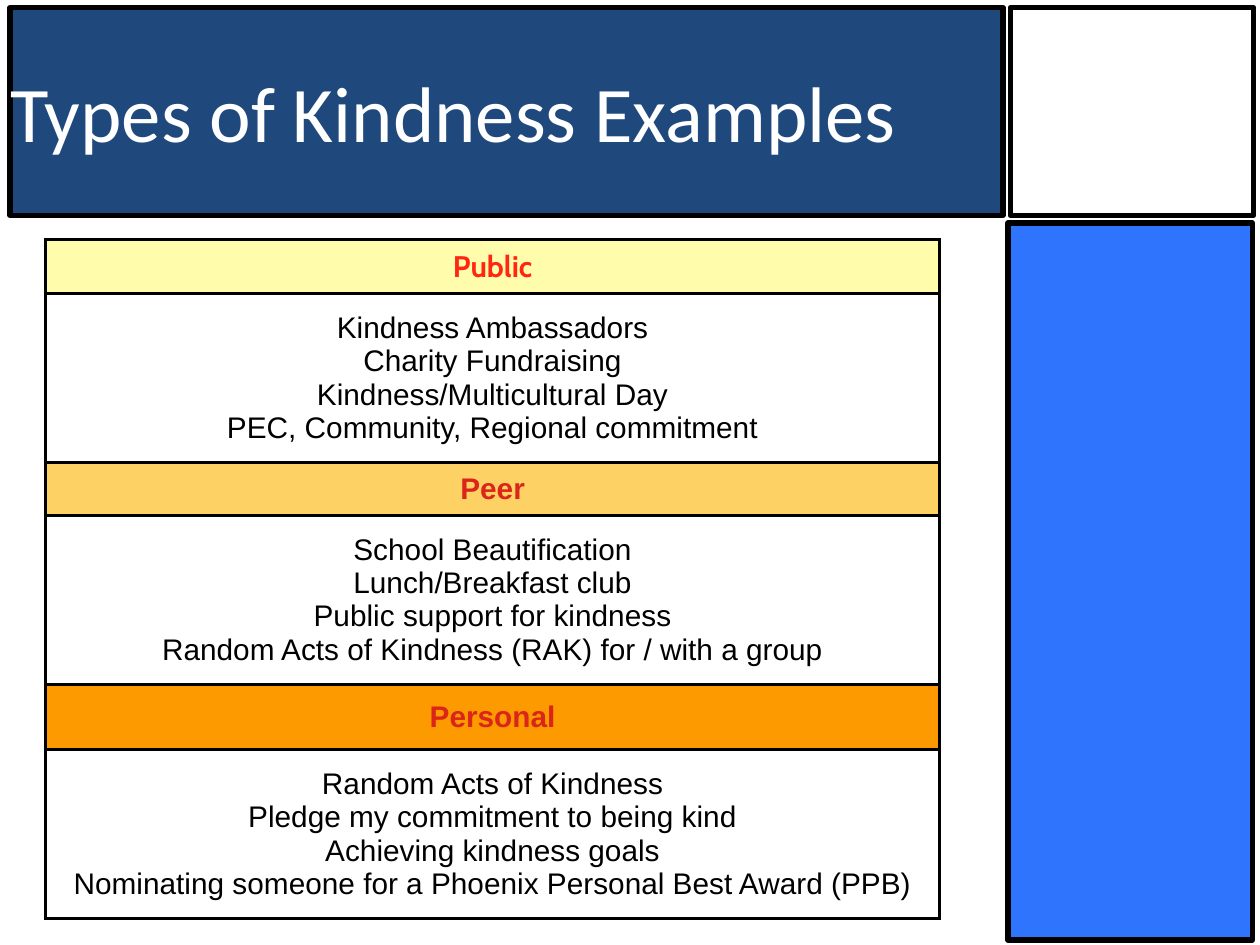
from dataclasses import dataclass

from lxml import etree
from pptx import Presentation
from pptx import util as u
from pptx.dml.color import RGBColor
from pptx.enum import shapes, text
from pptx.oxml import ns

EMU_PER_PX = 9144
BLACK = RGBColor(0x00, 0x00, 0x00)
WHITE = RGBColor(0xFF, 0xFF, 0xFF)
NAVY = RGBColor(0x1F, 0x49, 0x7D)
BLUE = RGBColor(0x2F, 0x74, 0xFD)
YELLOW = RGBColor(0xFF, 0xFC, 0xAB)
AMBER = RGBColor(0xFE, 0xD1, 0x64)
ORANGE = RGBColor(0xFD, 0x9A, 0x00)
BRIGHT_RED = RGBColor(0xFF, 0x27, 0x12)
RED = RGBColor(0xDB, 0x25, 0x1A)


@dataclass
class Box:
    x: int
    y: int
    w: int
    h: int
    fill: RGBColor


@dataclass
class Category:
    name: str
    height: int
    fill: RGBColor
    color: RGBColor
    font: str
    examples: list[str]


TITLE = Box(8, 6, 788, 165, NAVY)
PANELS = [Box(802, 6, 193, 165, WHITE), Box(800, 177, 194, 569, BLUE)]
TABLE_X, TABLE_Y, TABLE_W = 36, 190, 710
EXAMPLES_H = 134
CELL_MARGIN = 4
CATEGORIES = [
    Category("Public", 43, YELLOW, BRIGHT_RED, "Cabin", [
        "Kindness Ambassadors",
        "Charity Fundraising",
        "Kindness/Multicultural Day",
        "PEC, Community, Regional commitment",
    ]),
    Category("Peer", 42, AMBER, RED, "Arial", [
        "School Beautification",
        "Lunch/Breakfast club",
        "Public support for kindness",
        "Random Acts of Kindness (RAK) for / with a group",
    ]),
    Category("Personal", 52, ORANGE, RED, "Arial", [
        "Random Acts of Kindness",
        "Pledge my commitment to being kind",
        "Achieving kindness goals",
        "Nominating someone for a Phoenix Personal Best Award (PPB)",
    ]),
]


def px(n: int) -> u.Emu:
    return u.Emu(n * EMU_PER_PX)


def style_box(sp, box: Box) -> None:
    sp.fill.solid()
    sp.fill.fore_color.rgb = box.fill
    sp.line.color.rgb = BLACK
    sp.line.width = u.Pt(3)


def add_title(slide, box: Box, words: str) -> None:
    sp = slide.shapes.title
    sp.left, sp.top, sp.width, sp.height = map(px, (box.x, box.y, box.w, box.h))
    style_box(sp, box)
    tf = sp.text_frame
    tf.text = words
    tf.word_wrap = True
    tf.auto_size = text.MSO_AUTO_SIZE.NONE
    tf.vertical_anchor = text.MSO_ANCHOR.MIDDLE
    tf.margin_left = tf.margin_right = tf.margin_top = tf.margin_bottom = 0
    p = tf.paragraphs[0]
    p.alignment = text.PP_ALIGN.LEFT
    p.font.name, p.font.size = "Calibri", u.Pt(45)
    p.font.color.rgb = WHITE


def add_panel(slide, box: Box) -> None:
    sp = slide.shapes.add_shape(
        shapes.MSO_SHAPE.RECTANGLE, *map(px, (box.x, box.y, box.w, box.h)))
    sp.shadow.inherit = False
    style_box(sp, box)


def add_borders(cell) -> None:
    tc_pr = cell._tc.get_or_add_tcPr()
    for i, side in enumerate(("lnL", "lnR", "lnT", "lnB")):
        ln = etree.Element(ns.qn(f"a:{side}"), w=str(u.Pt(2)))
        fill = etree.SubElement(ln, ns.qn("a:solidFill"))
        etree.SubElement(fill, ns.qn("a:srgbClr"), val=str(BLACK))
        tc_pr.insert(i, ln)


def fill_cell(cell, lines: list[str], font: str, color: RGBColor,
              bold: bool, fill: RGBColor | None) -> None:
    if fill is None:
        cell.fill.background()
    else:
        cell.fill.solid()
        cell.fill.fore_color.rgb = fill
    add_borders(cell)
    cell.vertical_anchor = text.MSO_ANCHOR.MIDDLE
    cell.margin_left = cell.margin_right = px(CELL_MARGIN)
    cell.margin_top = cell.margin_bottom = px(CELL_MARGIN)
    cell.text_frame.text = "\n".join(lines)
    for p in cell.text_frame.paragraphs:
        p.alignment = text.PP_ALIGN.CENTER
        p.font.name, p.font.size, p.font.bold = font, u.Pt(17), bold
        p.font.color.rgb = color


def add_category_table(slide, categories: list[Category]) -> None:
    height = sum(c.height + EXAMPLES_H for c in categories)
    table = slide.shapes.add_table(
        2 * len(categories), 1,
        *map(px, (TABLE_X, TABLE_Y, TABLE_W, height))).table
    table.first_row = table.horz_banding = False
    for i, c in enumerate(categories):
        table.rows[2 * i].height = px(c.height)
        table.rows[2 * i + 1].height = px(EXAMPLES_H)
        fill_cell(table.cell(2 * i, 0), [c.name], c.font, c.color, True, c.fill)
        fill_cell(table.cell(2 * i + 1, 0), c.examples, "Arial", BLACK, False, None)


def main() -> None:
    prs = Presentation()
    prs.slide_width, prs.slide_height = px(1000), px(750)
    slide = prs.slides.add_slide(prs.slide_layouts.get_by_name("Title Only"))
    add_title(slide, TITLE, "Types of Kindness Examples")
    for box in PANELS:
        add_panel(slide, box)
    add_category_table(slide, CATEGORIES)
    prs.save("out.pptx")


if __name__ == "__main__":
    main()
